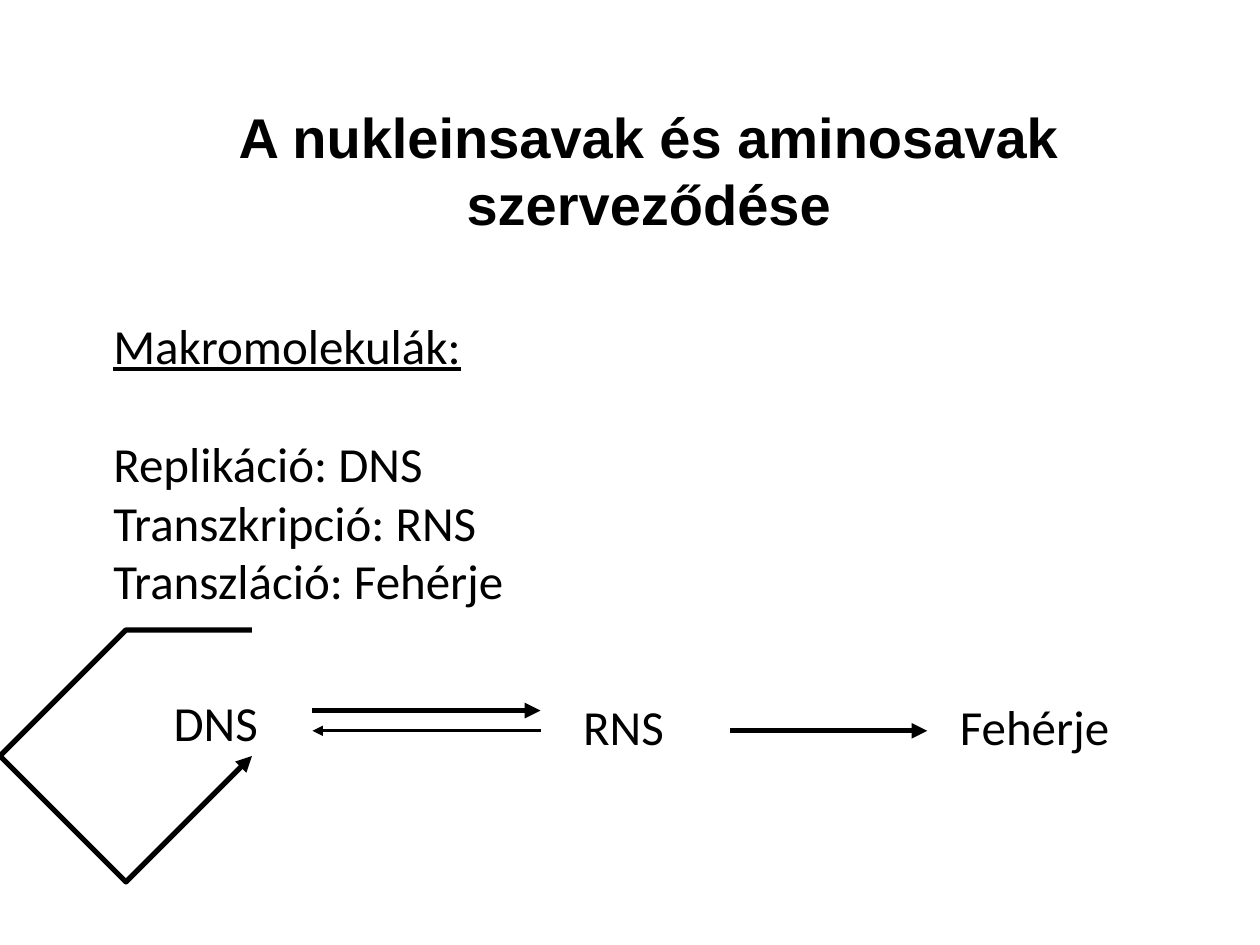
import pptx
import pptx.dml.color
import pptx.enum.shapes
import pptx.enum.text
import pptx.oxml
import pptx.oxml.ns
import pptx.util
from pptx.util import Inches, Pt

BLACK = pptx.dml.color.RGBColor(0, 0, 0)
TITLE_FORMAT = {"name": "Arial", "size": Pt(32), "bold": True}
BODY_FORMAT = {"name": "Calibri", "size": Pt(28)}
FLUSH = {"space_before": Pt(0), "space_after": Pt(0), "line_spacing": 1.0}
FRAME_FORMAT = {
    "auto_size": pptx.enum.text.MSO_AUTO_SIZE.NONE,
    "vertical_anchor": pptx.enum.text.MSO_ANCHOR.TOP,
}
BOX_SIDES = ("left", "top", "width", "height")

MACROMOLECULES = [
    "Makromolekulák:",
    "Replikáció: DNS",
    "Transzkripció: RNS",
    "Transzláció: Fehérje",
]
MOLECULE_LABELS = [
    ("DNS", (1.28, 5.45, 1.02, 0.57)),
    ("RNS", (4.53, 5.48, 1.02, 0.57)),
    ("Fehérje", (7.52, 5.48, 1.59, 0.57)),
]
# start x, end x, y, line width
PATHWAY_ARROWS = [
    (2.48, 4.29, 5.64, 3),
    (5.79, 7.36, 5.8, 3),
    (4.29, 2.48, 5.8, 1.5),
]
# start point, then two control points and an end point per curve
REPLICATION_LOOP = [
    (1.53, 5.4),
    (1.25, 5.27), (0.97, 5.13), (0.75, 5.25),
    (0.52, 5.36), (0.13, 5.88), (0.2, 6.11),
    (0.26, 6.35), (0.88, 6.65), (1.14, 6.66),
    (1.4, 6.68), (1.67, 6.27), (1.77, 6.19),
]


def apply_format(target, values):
    for attribute, value in values.items():
        setattr(target, attribute, value)


def write_lines(shape, lines, font_format, wrap=True):
    frame = shape.text_frame
    apply_format(frame, FRAME_FORMAT)
    frame.word_wrap = wrap
    frame.text = "\n".join(lines)
    for paragraph in frame.paragraphs:
        apply_format(paragraph, FLUSH)
        for run in paragraph.runs:
            apply_format(run.font, font_format)
            run.font.color.rgb = BLACK


def place(shape, box):
    apply_format(shape, dict(zip(BOX_SIDES, map(Inches, box))))


def add_title(slide):
    title = slide.shapes.title
    place(title, (1.77, 0.76, 6.76, 1.18))
    write_lines(title, ["A nukleinsavak és aminosavak", "szerveződése"],
                TITLE_FORMAT, wrap=False)
    for paragraph in title.text_frame.paragraphs:
        paragraph.alignment = pptx.enum.text.PP_ALIGN.CENTER


def add_macromolecule_list(slide):
    body = slide.placeholders[1]
    place(body, (0.8, 2.45, 3.97, 2.44))
    write_lines(body, MACROMOLECULES, BODY_FORMAT)
    for paragraph in body.text_frame.paragraphs:
        properties = paragraph._p.get_or_add_pPr()
        properties.set("marL", "0")
        properties.set("indent", "0")
        properties.append(pptx.oxml.parse_xml(
            f"<a:buNone {pptx.oxml.ns.nsdecls('a')}/>"))
    heading = body.text_frame.paragraphs[0]
    heading.space_after = Pt(34)
    heading.runs[0].font.underline = True


def add_label(slide, text, box):
    label = slide.shapes.add_textbox(*map(Inches, box))
    write_lines(label, [text], BODY_FORMAT)


def style_arrow(shape, width):
    """Give a line or open curve its colour, width and arrowhead."""
    shape.line.color.rgb = BLACK
    shape.line.width = Pt(width)
    namespace = pptx.oxml.ns.nsdecls("a")
    shape.line._get_or_add_ln().append(
        pptx.oxml.parse_xml(f'<a:tailEnd {namespace} type="triangle"/>'))


def add_arrow(slide, start_x, end_x, y, width):
    arrow = slide.shapes.add_connector(
        pptx.enum.shapes.MSO_CONNECTOR.STRAIGHT,
        Inches(start_x), Inches(y), Inches(end_x), Inches(y))
    style_arrow(arrow, width)
    arrow._element.spPr.append(
        pptx.oxml.parse_xml(f"<a:effectLst {pptx.oxml.ns.nsdecls('a')}/>"))


def add_replication_loop(slide):
    """Draw the loop as Bézier curves, three points to a curve."""
    start, *curve_points = REPLICATION_LOOP
    builder = slide.shapes.build_freeform(*start, scale=Inches(1))
    builder.add_line_segments(curve_points, close=False)
    loop = builder.convert_to_shape()
    outline = loop._element.find(".//" + pptx.oxml.ns.qn("a:path"))
    segments = outline.findall(pptx.oxml.ns.qn("a:lnTo"))
    for first in range(0, len(segments), 3):
        curve = pptx.oxml.parse_xml(
            f"<a:cubicBezTo {pptx.oxml.ns.nsdecls('a')}/>")
        outline.append(curve)
        for segment in segments[first:first + 3]:
            curve.append(segment[0])
            outline.remove(segment)
    loop.fill.background()
    loop.shadow.inherit = False
    style_arrow(loop, 3)


def main():
    presentation = pptx.Presentation()
    presentation.slide_width = Inches(10)
    presentation.slide_height = Inches(7.5)
    slide = presentation.slides.add_slide(presentation.slide_layouts[1])
    add_title(slide)
    add_macromolecule_list(slide)
    for text, box in MOLECULE_LABELS:
        add_label(slide, text, box)
    for arrow in PATHWAY_ARROWS:
        add_arrow(slide, *arrow)
    add_replication_loop(slide)
    presentation.save("out.pptx")


if __name__ == "__main__":
    main()
